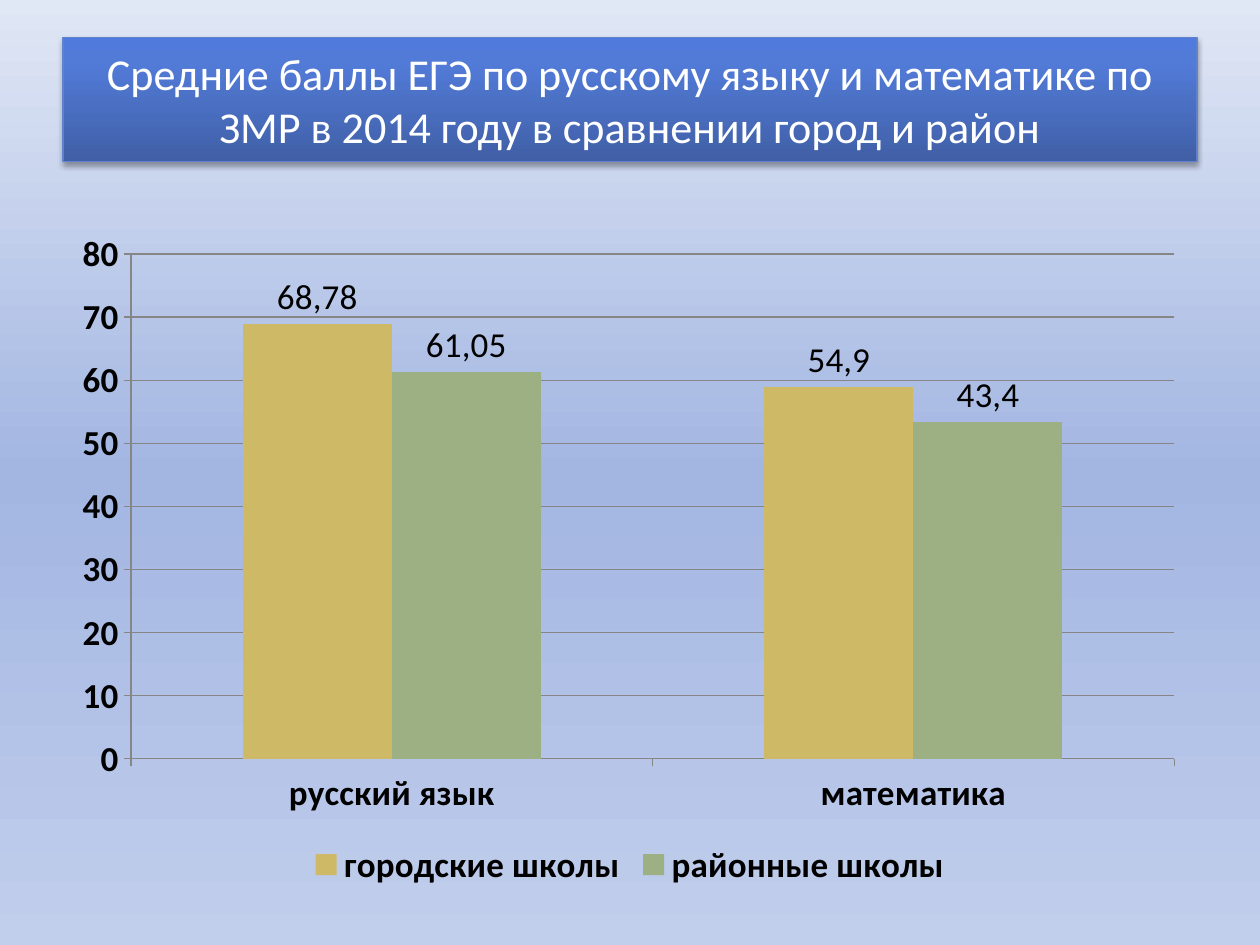
from lxml import etree
from pptx import Presentation
from pptx.chart.data import CategoryChartData
from pptx.dml.color import RGBColor
from pptx.enum.chart import XL_CHART_TYPE as ChartType
from pptx.enum.chart import XL_LABEL_POSITION as LabelPosition
from pptx.enum.chart import XL_LEGEND_POSITION as LegendPosition
from pptx.enum.chart import XL_TICK_MARK as TickMark
from pptx.enum.shapes import MSO_SHAPE as ShapeType
from pptx.enum.text import MSO_ANCHOR as Anchor
from pptx.enum.text import PP_ALIGN as Align
from pptx.oxml import parse_xml
from pptx.oxml.ns import nsdecls, qn
from pptx.util import Inches, Pt

BLACK = RGBColor(0x00, 0x00, 0x00)
WHITE = RGBColor(0xFF, 0xFF, 0xFF)
GREY = RGBColor(0x86, 0x86, 0x86)
GOLD = RGBColor(0xCE, 0xB9, 0x66)
GREEN = RGBColor(0x9C, 0xB0, 0x84)
BLUE_LINE = RGBColor(0x60, 0x81, 0xCD)
SKY = [(0, RGBColor(0xE0, 0xE7, 0xF5)), (50, RGBColor(0xA3, 0xB6, 0xE2)), (100, RGBColor(0xC1, 0xCE, 0xEC))]
BANNER = [(0, RGBColor(0x40, 0x5F, 0xA6)), (80, RGBColor(0x52, 0x7B, 0xD8)), (100, RGBColor(0x50, 0x7A, 0xDC))]


def set_format(target, values):
    for name, value in values.items():
        setattr(target, name, value)


def set_gradient(fill, properties, stops, angle):
    fill.gradient()
    gradient = properties.find(qn("a:gradFill"))
    stop_list = gradient.find(qn("a:gsLst"))
    for stop in list(stop_list):
        stop_list.remove(stop)
    for position, color in stops:
        stop = etree.SubElement(stop_list, qn("a:gs"), pos=str(position * 1000))
        etree.SubElement(stop, qn("a:srgbClr"), val=str(color))
    gradient.find(qn("a:lin")).set("ang", str(angle * 60000))


presentation = Presentation()
set_format(presentation, {"slide_width": Inches(10), "slide_height": Inches(7.5)})
slide = presentation.slides.add_slide(presentation.slide_layouts[6])
background = slide.background.fill
set_gradient(background, slide.element.find(".//" + qn("p:bgPr")), SKY, 90)

chart_data = CategoryChartData()
chart_data.categories = ["русский язык", "математика"]
chart_data.add_series("городские школы", (68.94, 58.96))
chart_data.add_series("районные школы", (61.32, 53.38))
chart = slide.shapes.add_chart(
    ChartType.COLUMN_CLUSTERED, Inches(0.5), Inches(1.75), Inches(9), Inches(5.34), chart_data
).chart
set_format(chart, {"has_title": False, "has_legend": True})
set_format(chart.legend, {"position": LegendPosition.BOTTOM, "include_in_layout": False})
set_format(chart.font, {"name": "Calibri", "size": Pt(20), "bold": True})
chart.font.color.rgb = BLACK

value_axis = chart.value_axis
set_format(value_axis, {"minimum_scale": 0, "maximum_scale": 80, "major_unit": 10, "has_major_gridlines": True})
for axis in (chart.category_axis, value_axis):
    set_format(axis, {"major_tick_mark": TickMark.OUTSIDE, "minor_tick_mark": TickMark.NONE})
for line in (chart.category_axis.format.line, value_axis.format.line, value_axis.major_gridlines.format.line):
    line.color.rgb = GREY
    line.width = Pt(0.75)

plot = chart.plots[0]
set_format(plot, {"gap_width": 150, "overlap": 0, "vary_by_categories": False})
series_styles = [(GOLD, ["68,78", "54,9"]), (GREEN, ["61,05", "43,4"])]
for series, (color, labels) in zip(plot.series, series_styles):
    series.format.fill.solid()
    series.format.fill.fore_color.rgb = color
    set_format(series.data_labels, {"show_value": True, "position": LabelPosition.OUTSIDE_END})
    for index, text in enumerate(labels):
        label = series.points[index].data_label
        label.text_frame.text = text
        label.position = LabelPosition.OUTSIDE_END
        label_font = label.text_frame.paragraphs[0].runs[0].font
        set_format(label_font, {"name": "Calibri", "size": Pt(20), "bold": False})
        label_font.color.rgb = BLACK

plot_area = chart.element.find(".//" + qn("c:plotArea"))
for layout in plot_area.findall(qn("c:layout")):
    plot_area.remove(layout)
plot_area.insert(0, parse_xml(
    f'<c:layout {nsdecls("c")}><c:manualLayout><c:layoutTarget val="inner"/>'
    '<c:xMode val="edge"/><c:yMode val="edge"/>'
    '<c:x val="0.06"/><c:y val="0.05"/><c:w val="0.92"/><c:h val="0.75"/>'
    "</c:manualLayout></c:layout>"
))

title = slide.shapes.add_shape(ShapeType.RECTANGLE, Inches(0.5), Inches(0.3), Inches(9), Inches(0.98))
set_gradient(title.fill, title.element.spPr, BANNER, 270)
title.line.color.rgb = BLUE_LINE
title.line.width = Pt(0.75)
title.shadow.inherit = False
title.element.spPr.find(qn("a:effectLst")).append(parse_xml(
    f'<a:outerShdw {nsdecls("a")} blurRad="{Pt(3.1)}" dist="{Pt(1.8)}" dir="5400000" rotWithShape="0">'
    '<a:srgbClr val="000000"><a:alpha val="35000"/></a:srgbClr></a:outerShdw>'
))
set_format(title.text_frame, {"word_wrap": True, "vertical_anchor": Anchor.MIDDLE})
paragraph = title.text_frame.paragraphs[0]
paragraph.alignment = Align.CENTER
run = paragraph.add_run()
run.text = "Средние баллы ЕГЭ по русскому языку и математике по ЗМР в 2014 году в сравнении город и район"
set_format(run.font, {"name": "Calibri", "size": Pt(25.2)})
run.font.color.rgb = WHITE

presentation.save("out.pptx")
